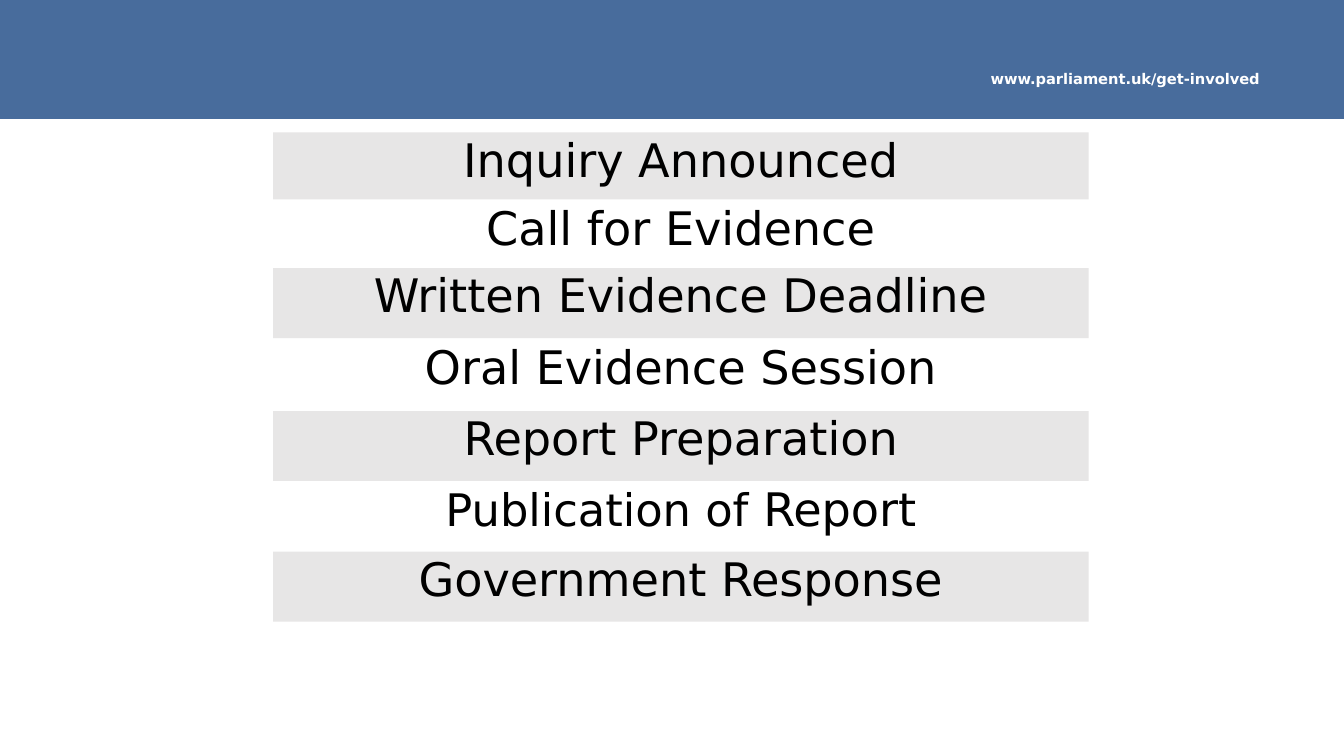
from pptx import Presentation
from pptx.dml.color import RGBColor
from pptx.enum.shapes import MSO_SHAPE
from pptx.enum.text import MSO_ANCHOR, PP_ALIGN
from pptx.util import Pt

RECT = MSO_SHAPE.RECTANGLE
TOP = MSO_ANCHOR.TOP
LEFT, CENTER = PP_ALIGN.LEFT, PP_ALIGN.CENTER

BLUE = RGBColor(0x48, 0x6C, 0x9C)
GREY = RGBColor(0xE7, 0xE6, 0xE6)
WHITE = RGBColor(0xFF, 0xFF, 0xFF)
BLACK = RGBColor(0x00, 0x00, 0x00)
FONT = "DejaVu Sans"

STAGE_LEFT, STAGE_WIDTH = 195.1, 582.5
# Top, height and text runs (text, size) of each inquiry stage
STAGES = [
    (94.5, 48, [("Inquiry Announced", 33)]),
    (143, 47.5, [("Call for Evidence", 33)]),
    (191.5, 50, [("Written Evidence Deadline", 33)]),
    (242.6, 50.4, [("Oral Evidence Session", 33)]),
    (293.6, 50, [("Report Preparation", 33)]),
    (344, 50, [("Publication of ", 32), ("Report", 33)]),
    (394, 50, [("Government Response", 33)]),
]


def add_block(slide, left, top, width, height, fill):
    s = slide.shapes.add_shape(RECT, Pt(left), Pt(top), Pt(width), Pt(height))
    s.shadow.inherit = False
    s.fill.solid()
    s.fill.fore_color.rgb = fill
    s.line.fill.background()
    return s


def write(s, runs, color, align=LEFT, bold=False, spacing=1.0):
    tf = s.text_frame
    tf.word_wrap = True
    tf.vertical_anchor = TOP
    p = tf.paragraphs[0]
    p.alignment = align
    p.line_spacing = spacing
    for text, size in runs:
        r = p.add_run()
        r.text = text
        r.font.name = FONT
        r.font.size = Pt(size)
        r.font.bold = bold
        r.font.color.rgb = color


def main():
    prs = Presentation()
    prs.slide_width, prs.slide_height = Pt(960), Pt(540)
    slide = prs.slides.add_slide(prs.slide_layouts[6])

    # Header band with web address
    add_block(slide, 0, 0, 960, 85, BLUE)
    address = slide.shapes.add_textbox(Pt(700.5), Pt(46), Pt(217), Pt(20))
    write(address, [("www.parliament.uk/get-involved", 10.5)], WHITE, bold=True)

    # Inquiry stages, alternately shaded
    for i, (top, height, runs) in enumerate(STAGES):
        fill = WHITE if i % 2 else GREY
        s = add_block(slide, STAGE_LEFT, top, STAGE_WIDTH, height, fill)
        write(s, runs, BLACK, CENTER, spacing=0.9)

    prs.save("out.pptx")


if __name__ == "__main__":
    main()
